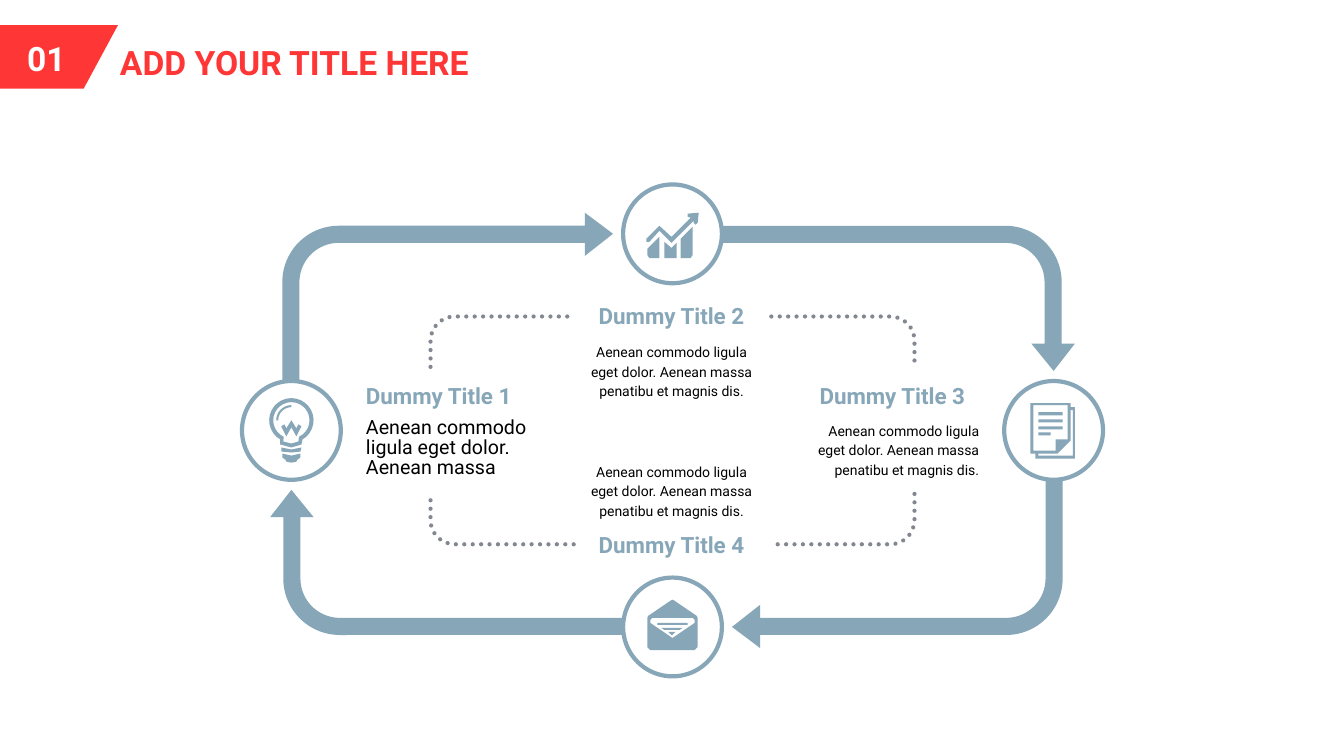
from math import cos, radians, sin

from pptx import Presentation
from pptx.dml.color import RGBColor
from pptx.enum import dml, shapes, text
from pptx.oxml.ns import qn
from pptx.util import Inches, Pt

RED, BLUE, GREY, WHITE, BLACK = "FF3636", "87A7B9", "828790", "FFFFFF", "000000"
LEFT, MID, RIGHT = text.PP_ALIGN.LEFT, text.PP_ALIGN.CENTER, text.PP_ALIGN.RIGHT
HUB = (6.67, 4.27)
SHORT = "Aenean commodo ligula eget dolor. Aenean massa"
LONG = SHORT + " penatibu et magnis dis."


def paint(target, color):
    target.solid()
    target.fore_color.rgb = RGBColor.from_string(color)


def arc(x, y, r, start, end, steps=24):
    turns = [radians(start + (end - start) * i / steps) for i in range(steps + 1)]
    return [(x + r * cos(a), y + r * sin(a)) for a in turns]


def rect(x1, y1, x2, y2):
    return [(x1, y1), (x2, y1), (x2, y2), (x1, y2)]


def turn(points):
    return [(-x, -y) for x, y in points]


def outline(slide, at, loops, close=True):
    def place(x, y):
        return Inches(at[0] + x), Inches(at[1] + y)

    pen = slide.shapes.build_freeform(*place(*loops[0][0]))
    for i, loop in enumerate(loops):
        if i:
            pen.move_to(*place(*loop[0]))
        pen.add_line_segments([place(*p) for p in loop[1:]], close=close)
    shape = pen.convert_to_shape()
    shape.shadow.inherit = False
    return shape


def solid(slide, at, loops, color=BLUE):
    shape = outline(slide, at, loops)
    paint(shape.fill, color)
    shape.line.fill.background()


def dots(slide, points):
    shape = outline(slide, HUB, [points], close=False)
    shape.fill.background()
    paint(shape.line.fill, GREY)
    shape.line.width = Pt(3)
    shape.line.dash_style = dml.MSO_LINE.ROUND_DOT
    shape.element.spPr.find(qn("a:ln")).set("cap", "rnd")


def ring(slide, x, y):
    r = 0.49
    shape = slide.shapes.add_shape(shapes.MSO_SHAPE.OVAL, Inches(x - r), Inches(y - r),
                                   Inches(2 * r), Inches(2 * r))
    shape.shadow.inherit = False
    paint(shape.fill, WHITE)
    paint(shape.line.fill, BLUE)
    shape.line.width = Pt(3)


def write(shape, words, size, color, bold=False, align=LEFT, space=None):
    frame = shape.text_frame
    frame.word_wrap = True
    frame.auto_size = text.MSO_AUTO_SIZE.NONE
    frame.vertical_anchor = text.MSO_ANCHOR.TOP
    para = frame.paragraphs[0]
    para.alignment = align
    if space:
        para.line_spacing = Pt(space)
    run = para.add_run()
    run.text = words
    run.font.name = "Roboto"
    run.font.size = Pt(size)
    run.font.bold = bold
    run.font.color.rgb = RGBColor.from_string(color)
    return frame


def label(slide, x, y, h, *args, **style):
    box = slide.shapes.add_textbox(Inches(x), Inches(y), Inches(1.72), Inches(h))
    frame = write(box, *args, **style)
    frame.margin_left = frame.margin_right = frame.margin_top = frame.margin_bottom = 0
    return frame


def header(slide):
    solid(slide, (0, 0.25), [[(0, 0), (1.17, 0), (0.83, 0.63), (0, 0.63)]], RED)
    title = slide.shapes.title
    title.left, title.top = Inches(1.09), Inches(0.37)
    title.width, title.height = Inches(4.14), Inches(0.5)
    write(title, "ADD YOUR TITLE HERE", 24, RED, bold=True)
    box = slide.shapes.add_textbox(Inches(0.17), Inches(0.33), Inches(0.63), Inches(0.5))
    write(box, "01", 24, WHITE, bold=True)


def cycle(slide):
    # Bands run clockwise; the lower two are the upper two turned half round
    rise = ([(-3.87, 0)] + arc(-3.31, -1.47, 0.56, 180, 270)
            + [(-0.87, -2.03), (-0.87, -2.16), (-0.59, -1.95), (-0.87, -1.73), (-0.87, -1.86)]
            + arc(-3.31, -1.47, 0.39, 270, 180) + [(-3.7, 0)])
    fall = ([(0, -2.03)] + arc(3.3, -1.47, 0.56, 270, 360)
            + [(3.86, -0.86), (3.99, -0.86), (3.78, -0.59), (3.56, -0.86), (3.69, -0.86)]
            + arc(3.3, -1.47, 0.39, 360, 270) + [(0, -1.86)])
    for band in (rise, fall):
        solid(slide, HUB, [band])
        solid(slide, HUB, [turn(band)])
    # Dotted corners
    for points in ([(-2.4, -0.63)] + arc(-2.16, -0.89, 0.24, 180, 270, 8) + [(-0.98, -1.13)],
                   [(0.98, -1.13)] + arc(2.16, -0.89, 0.24, 270, 360, 8) + [(2.4, -0.63)]):
        dots(slide, points)
        dots(slide, turn(points))


def bulb():
    return [
        arc(0, -0.1, 0.22, 120, 420) + [(0.1, 0.14), (0, 0.17), (-0.11, 0.14)],
        arc(0, -0.1, 0.18, 115, 425) + [(0.07, 0.11), (0, 0.13), (-0.08, 0.11)],
        arc(0, -0.1, 0.15, 180, 270) + arc(0, -0.1, 0.13, 270, 180),
        [(-0.1, -0.04), (-0.07, -0.06), (-0.05, -0.02), (0, -0.1), (0.05, -0.02),
         (0.07, -0.06), (0.1, -0.04), (0.05, 0.06), (0, -0.03), (-0.05, 0.06)],
        [(-0.1, 0.17), (0, 0.19), (0.1, 0.17), (0.09, 0.21), (0, 0.22), (-0.1, 0.21)],
        [(-0.09, 0.23), (0, 0.25), (0.09, 0.23), (0.09, 0.27), (0.06, 0.29),
         (0.05, 0.31), (0, 0.32), (-0.05, 0.31), (-0.06, 0.29), (-0.09, 0.27)],
    ]


def chart():
    return [
        [(-0.25, 0.15), (-0.13, 0.03), (-0.13, 0.24), (-0.23, 0.24), (-0.25, 0.21)],
        [(-0.08, 0.08), (-0.01, 0.14), (0.04, 0.09), (0.04, 0.24), (-0.08, 0.24)],
        [(0.08, 0.05), (0.2, -0.07), (0.2, 0.21), (0.18, 0.24), (0.08, 0.24)],
        [(0.15, -0.2), (0.26, -0.21), (0.25, -0.11), (0.23, -0.09), (0.21, -0.11),
         (0.21, -0.13), (-0.01, 0.09), (-0.13, -0.03), (-0.23, 0.08), (-0.26, 0.08),
         (-0.26, 0.05), (-0.13, -0.08), (-0.01, 0.03), (0.18, -0.16), (0.15, -0.17)],
    ]


def pages():
    return [
        [(-0.23, -0.27), (0.17, -0.27), (0.17, -0.23), (0.21, -0.23), (0.21, 0.28),
         (-0.18, 0.28), (-0.18, 0.23), (-0.23, 0.23)],
        [(-0.2, -0.25), (0.14, -0.25), (0.14, 0.09), (0.02, 0.09), (0.02, 0.2), (-0.2, 0.2)],
        [(0.19, 0.25), (-0.15, 0.25), (-0.15, 0.23), (0.04, 0.23), (0.17, 0.1),
         (0.17, -0.2), (0.19, -0.2)],
        *[rect(-0.15, y, x, y + 0.03)
          for y, x in ((-0.18, 0.09), (-0.11, 0.09), (-0.04, 0.09), (0.02, -0.03))],
    ]


def mail():
    return [
        [(-0.25, -0.09), (-0.24, -0.11), (-0.02, -0.26), (0, -0.27), (0.02, -0.26),
         (0.24, -0.11), (0.25, -0.09), (0.25, 0.2), (0.22, 0.23), (-0.22, 0.23), (-0.25, 0.2)],
        [(0.22, -0.04), (0, 0.11), (-0.22, -0.04), (-0.22, -0.07), (-0.2, -0.09),
         (0.2, -0.09), (0.22, -0.07)],
        rect(-0.15, -0.04, 0.15, -0.02),
        [(-0.11, 0.01), (0.1, 0.01), (0.07, 0.03), (-0.08, 0.03)],
        [(-0.04, 0.05), (0.03, 0.05), (0, 0.08), (-0.01, 0.08)],
    ]


def main():
    prs = Presentation()
    prs.slide_width, prs.slide_height = Inches(13.33), Inches(7.5)
    slide = prs.slides.add_slide(prs.slide_layouts[5])
    header(slide)
    cycle(slide)

    # Stations with their icons
    for at, icon in (((6.67, 6.22), mail()), ((2.89, 4.27), bulb()),
                     ((6.67, 2.32), chart()), ((10.45, 4.27), pages())):
        ring(slide, *at)
        solid(slide, at, icon)

    # Station texts: number, left, title top, title side, body top, body side, size, words
    for num, x, top, side, low, flow, size, words in (
            (1, 3.63, 3.79, LEFT, 4.16, LEFT, 14, SHORT),
            (2, 5.8, 3, MID, 3.38, MID, 10, LONG),
            (3, 7.99, 3.79, MID, 4.16, RIGHT, 10, LONG),
            (4, 5.8, 5.27, MID, 4.36, MID, 10, LONG)):
        label(slide, x, top, 0.27, f"Dummy Title {num}", 16, BLUE, bold=True, align=side)
        body = label(slide, x, low, 0.79, words, size, BLACK, align=flow, space=14)
        if low < top:
            body.vertical_anchor = text.MSO_ANCHOR.BOTTOM

    prs.save("out.pptx")


if __name__ == "__main__":
    main()
